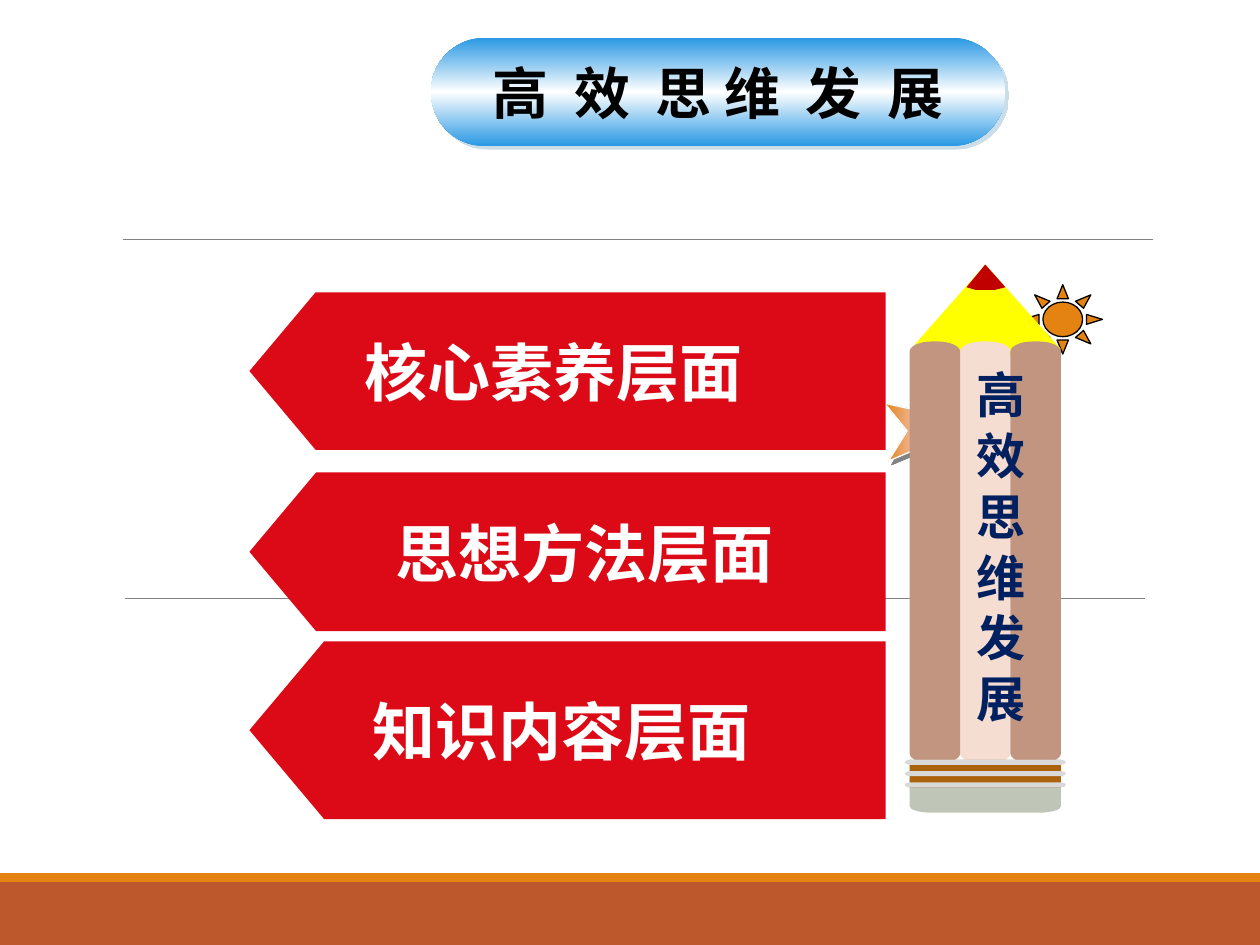
import pptx
import pptx.util
import pptx.dml.color
import pptx.enum.shapes
import pptx.enum.text
import pptx.oxml
import pptx.oxml.ns

WIDTH, HEIGHT = 10, 7.5
FONT = "Noto Sans CJK SC"
SHAPES = pptx.enum.shapes.MSO_SHAPE
ALIGN = pptx.enum.text.PP_ALIGN
ANCHOR = pptx.enum.text.MSO_ANCHOR
NAMESPACE = pptx.oxml.ns.nsdecls("a")

TITLE = [("高 效 ", 3.6), ("思 ", 0), ("维 发 ", 3.6), ("展", 0)]
PENCIL_LABEL = "高 效 思 维 发 展"
RULES = [(0.98, 9.15, 1.9), (0.99, 9.09, 4.75)]
FOOTER = [(7, 0.5, "BD582C"), (6.93, 0.07, "E48312")]
LEVELS = [
    ("核心素养层面", 2.32, 1.25, ALIGN.LEFT, 0.57),
    ("思想方法层面", 3.75, 1.26, ALIGN.CENTER, 0),
    ("知识内容层面", 5.09, 1.41, ALIGN.LEFT, 0.6),
]
LEVEL_LEFT, LEVEL_WIDTH, LEVEL_RED = 1.98, 5.05, "DC0A16"

PENCIL_LEFT, PENCIL_WIDTH = 7.22, 1.2
STAVE_WIDTH = PENCIL_WIDTH / 3
STAVE_TOP, STAVE_HEIGHT = 2.71, 3.35
STAVES = [(1, "F5DDD2"), (2, "C29580"), (0, "C29580")]
CONE = [(7.23, 2.77), (7.82, 2.1), (8.42, 2.77), (8.2, 2.85), (7.22, 2.79)]
LEAD = [(7.82, 2.1), (7.67, 2.28), (7.74, 2.3), (7.82, 2.3), (7.9, 2.3), (7.98, 2.28)]
FERRULE_TOP, FERRULE_HEIGHT = 6.03, 0.22
RING_COUNT, RING_STEP, RING_HEIGHT, RING_OVERHANG = 3, 0.09, 0.04, 0.04
STAR = [(7.02, 3.2), (7.29, 3.26), (7.43, 3.02), (7.45, 3.3), (7.72, 3.37),
        (7.46, 3.48), (7.48, 3.77), (7.31, 3.55), (7.05, 3.66), (7.2, 3.42)]

deck = pptx.Presentation()
deck.slide_width = pptx.util.Inches(WIDTH)
deck.slide_height = pptx.util.Inches(HEIGHT)
slide = deck.slides.add_slide(deck.slide_layouts[6])


def inches(*lengths):
    return [pptx.util.Inches(length) for length in lengths]


def color(value):
    return pptx.dml.color.RGBColor.from_string(value)


def paint(shape, fill, line=None, line_width=0.75):
    shape.shadow.inherit = False
    if fill:
        shape.fill.solid()
        shape.fill.fore_color.rgb = color(fill)
    else:
        shape.fill.background()
    if line:
        shape.line.color.rgb = color(line)
        shape.line.width = pptx.util.Pt(line_width)
    else:
        shape.line.fill.background()
    return shape


def preset(kind, left, top, width, height, fill, line=None):
    shape = slide.shapes.add_shape(kind, *inches(left, top, width, height))
    return paint(shape, fill, line)


def outline(points, fill, line=None):
    corners = [inches(*point) for point in points]
    builder = slide.shapes.build_freeform(*corners[0], scale=1.0)
    builder.add_line_segments(corners[1:], close=True)
    return paint(builder.convert_to_shape(), fill, line)


def rounded(left, top, width, height, radius_x, radius_y, fill):
    right, bottom = left + width, top + height
    points = []
    for x, y, inward_x, inward_y, starts_on_side in [
            (right, bottom, -radius_x, -radius_y, True),
            (left, bottom, radius_x, -radius_y, False),
            (left, top, radius_x, radius_y, True),
            (right, top, -radius_x, radius_y, False)]:
        curve = [(x, y + inward_y), (x, y + inward_y * 0.45),
                 (x + inward_x * 0.45, y), (x + inward_x, y)]
        points += curve if starts_on_side else curve[::-1]
    shape = outline(points, fill)
    segments = list(shape._element.iter(pptx.oxml.ns.qn("a:lnTo")))
    for first in range(0, len(segments), 4):
        bend = pptx.oxml.parse_xml(f"<a:cubicBezTo {NAMESPACE}/>")
        segments[first].addprevious(bend)
        for segment in segments[first:first + 3]:
            bend.append(segment[0])
            segment.getparent().remove(segment)


def gradient(shape, stops, direction):
    stop_list = "".join(
        f'<a:gs pos="{share * 1000}"><a:srgbClr val="{value}"/></a:gs>'
        for share, value in stops)
    fill = pptx.oxml.parse_xml(
        f"<a:gradFill {NAMESPACE}><a:gsLst>{stop_list}</a:gsLst>{direction}</a:gradFill>")
    properties = shape._element.spPr
    properties.replace(properties.find(pptx.oxml.ns.qn("a:noFill")), fill)


def cast_shadow(shape, value, opacity):
    effects = shape._element.spPr.find(pptx.oxml.ns.qn("a:effectLst"))
    effects.append(pptx.oxml.parse_xml(
        f'<a:outerShdw {NAMESPACE} dist="{pptx.util.Pt(2.8)}" dir="2700000" algn="ctr" '
        f'rotWithShape="0"><a:srgbClr val="{value}"><a:alpha val="{opacity * 1000}"/>'
        "</a:srgbClr></a:outerShdw>"))


def write(shape, pieces, size, value, align=ALIGN.LEFT, indent=0):
    paragraph = shape.text_frame.paragraphs[0]
    paragraph.alignment = align
    paragraph._p.get_or_add_pPr().set("marL", str(pptx.util.Inches(indent)))
    paragraph.font.name = FONT
    paragraph.font.size = pptx.util.Pt(size)
    paragraph.font.bold = True
    paragraph.font.color.rgb = color(value)
    for text, spacing in pieces:
        run = paragraph.add_run()
        run.text = text
        run_properties = run._r.get_or_add_rPr()
        if spacing:
            run_properties.set("spc", str(round(spacing * 100)))
        run_properties.append(
            pptx.oxml.parse_xml(f'<a:ea {NAMESPACE} typeface="{FONT}"/>'))


def draw_frame():
    for start, end, y in RULES:
        rule = slide.shapes.add_connector(
            pptx.enum.shapes.MSO_CONNECTOR.STRAIGHT, *inches(start, y, end, y))
        rule.line.color.rgb = color("808080")
        rule.line.width = pptx.util.Pt(0.5)
        rule._element.spPr.append(pptx.oxml.parse_xml(f"<a:effectLst {NAMESPACE}/>"))
    for top, height, fill in FOOTER:
        preset(SHAPES.RECTANGLE, 0, top, WIDTH, height, fill)


def draw_ornaments():
    preset(SHAPES.SUN, 8.12, 2.26, 0.63, 0.55, "E48312", "000000")
    star = outline(STAR, None, "FEFFFF")
    gradient(star, [(0, "F6D1DE"), (100, "E48312")],
             '<a:path path="shape"><a:fillToRect l="50000" t="50000" r="50000" b="50000"/></a:path>')
    cast_shadow(star, "080808", 50)


def draw_title():
    pill = preset(SHAPES.ROUNDED_RECTANGLE, 3.42, 0.3, 4.56, 0.86, None)
    pill.adjustments[0] = 0.5
    gradient(pill, [(0, "2998E3"), (50, "FFFFFF"), (100, "2998E3")],
             '<a:lin ang="5400000" scaled="0"/>')
    cast_shadow(pill, "CCDDEA", 100)
    pill.text_frame.word_wrap = False
    pill.text_frame.vertical_anchor = ANCHOR.MIDDLE
    write(pill, TITLE, 32, "000000", ALIGN.CENTER)


def draw_pencil():
    rounded(PENCIL_LEFT, 6.14, PENCIL_WIDTH, 0.31, 0.18, 0.05, "BFC6B8")
    outline(CONE, "FFFF00")
    for column, fill in STAVES:
        rounded(PENCIL_LEFT + column * STAVE_WIDTH, STAVE_TOP, STAVE_WIDTH, STAVE_HEIGHT,
                0.18, 0.08, fill)
    outline(LEAD, "C00000")
    preset(SHAPES.RECTANGLE, PENCIL_LEFT, FERRULE_TOP, PENCIL_WIDTH, FERRULE_HEIGHT, "AB620D")
    for ring in range(RING_COUNT):
        rounded(PENCIL_LEFT - RING_OVERHANG, FERRULE_TOP + ring * RING_STEP,
                PENCIL_WIDTH + 2 * RING_OVERHANG, RING_HEIGHT, 0.04, 0.02, "D9D9D9")
    label = slide.shapes.add_textbox(*inches(7.54, 2.84, 0.67, 3.14))
    label.text_frame.word_wrap = True
    label.text_frame._txBody.bodyPr.set("vert", "eaVert")
    write(label, [(PENCIL_LABEL, 0)], 28, "002060")


def draw_levels():
    for text, top, height, align, indent in LEVELS:
        arrow = preset(SHAPES.PENTAGON, LEVEL_LEFT, top, LEVEL_WIDTH, height, LEVEL_RED)
        arrow.adjustments[0] = 0.42
        arrow._element.spPr.xfrm.set("flipH", "1")
        frame = arrow.text_frame
        frame.margin_left, frame.margin_top, frame.margin_right, frame.margin_bottom = inches(
            0.08, 0, 0.08, 0)
        frame.vertical_anchor = ANCHOR.MIDDLE
        write(arrow, [(text, 0)], 36, "FFFFFF", align, indent)


draw_frame()
draw_ornaments()
draw_title()
draw_pencil()
draw_levels()
deck.save("out.pptx")
